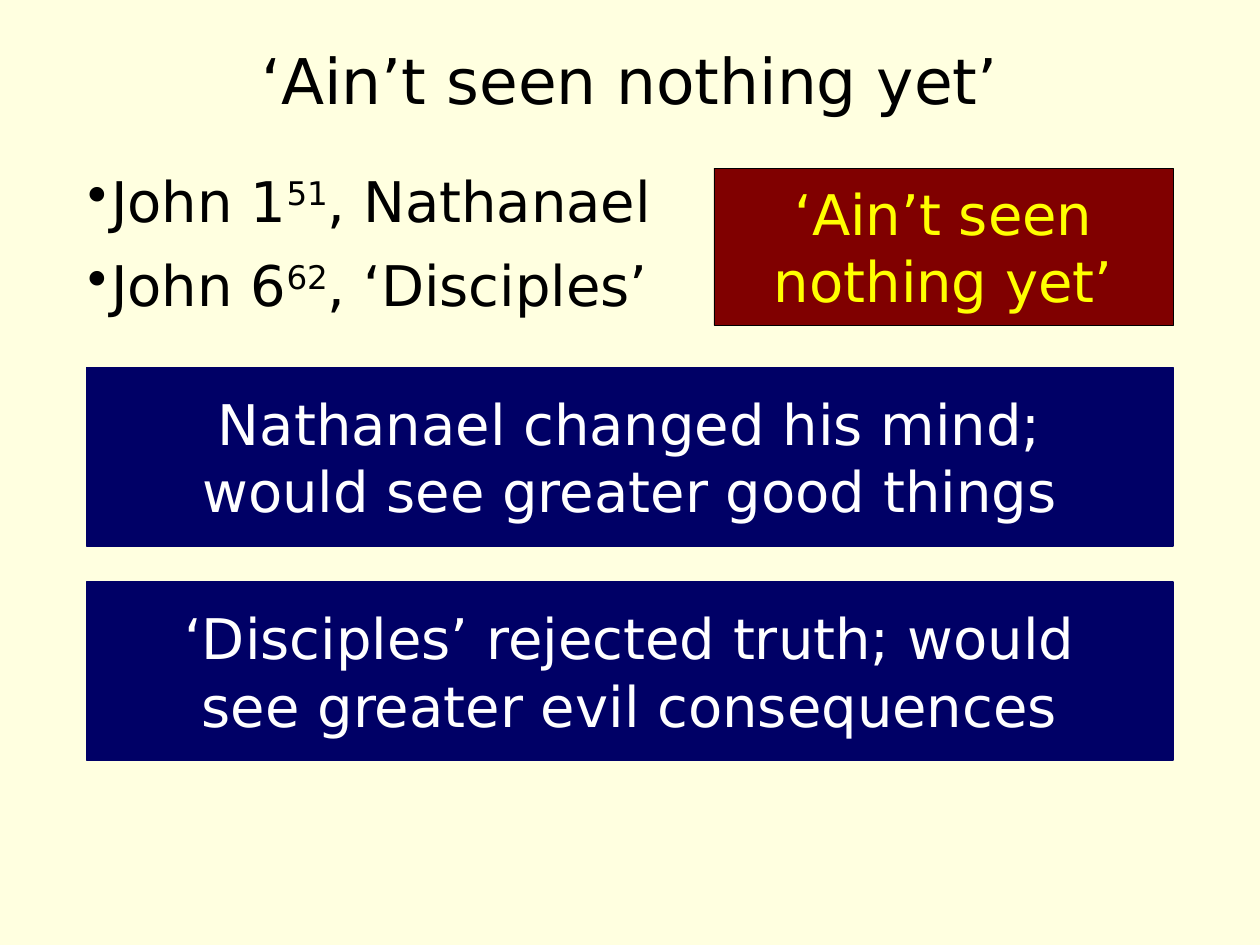
from lxml import etree
from pptx import Presentation
from pptx.dml.color import RGBColor
from pptx.enum.shapes import MSO_SHAPE
from pptx.enum.text import MSO_ANCHOR, PP_ALIGN
from pptx.oxml.ns import qn
from pptx.util import Pt

RECTANGLE = MSO_SHAPE.RECTANGLE
MIDDLE, TOP = MSO_ANCHOR.MIDDLE, MSO_ANCHOR.TOP
CENTER, LEFT = PP_ALIGN.CENTER, PP_ALIGN.LEFT

FONT = "DejaVu Sans"
COLORS = {
    "background": "FFFFE0",
    "text": "000000",
    "maroon": "800000",
    "yellow": "FFFF00",
    "navy": "000066",
    "white": "FFFFFF",
}
BULLET_FORMAT = {
    "alignment": LEFT,
    "line_spacing": 0.9,
    "space_before": Pt(7.5),
    "space_after": Pt(6),
}
VERSES = [("John 1", "51", ", Nathanael"), ("John 6", "62", ", ‘Disciples’")]
MESSAGES = [
    "Nathanael changed his mind;\vwould see greater good things",
    "‘Disciples’ rejected truth; would\vsee greater evil consequences",
]


def color(name):
    return RGBColor.from_string(COLORS[name])


def set_format(target, values):
    for name, value in values.items():
        setattr(target, name, value)


def style_font(font, size, color_name):
    set_format(font, {"name": FONT, "size": Pt(size)})
    font.color.rgb = color(color_name)


def in_points(box):
    return [Pt(length) for length in box]


def add_text_box(page, box, anchor):
    frame = page.shapes.add_textbox(*in_points(box)).text_frame
    set_format(frame, {"word_wrap": True, "vertical_anchor": anchor})
    return frame


def add_title(page, box, text):
    para = add_text_box(page, box, MIDDLE).paragraphs[0]
    set_format(para, {"text": text, "alignment": CENTER, "line_spacing": 0.9})
    style_font(para.runs[0].font, 36, "text")


def add_verses(page, box, verses):
    frame = add_text_box(page, box, TOP)
    for index, parts in enumerate(verses):
        para = frame.add_paragraph() if index else frame.paragraphs[0]
        set_format(para, BULLET_FORMAT)
        # Hanging bullet
        properties = para._p.get_or_add_pPr()
        properties.set("marL", str(Pt(13.5)))
        properties.set("indent", str(-Pt(13.5)))
        etree.SubElement(properties, qn("a:buChar")).set("char", "•")
        # The middle part is the raised verse number
        for position, part in enumerate(parts):
            span = para.add_run()
            span.text = part
            style_font(span.font, 32, "text")
            if position == 1:
                span._r.get_or_add_rPr().set("baseline", "30000")


def add_panel(page, box, text, fill, line, line_width, text_color):
    panel = page.shapes.add_shape(RECTANGLE, *in_points(box))
    panel.shadow.inherit = False
    panel.fill.solid()
    panel.fill.fore_color.rgb = color(fill)
    panel.line.color.rgb = color(line)
    panel.line.width = Pt(line_width)
    frame = panel.text_frame
    set_format(frame, {"word_wrap": True, "vertical_anchor": MIDDLE})
    para = frame.paragraphs[0]
    set_format(para, {"text": text, "alignment": CENTER})
    for span in para.runs:
        style_font(span.font, 32, text_color)


def add_messages(page, box, messages, gap):
    left, top, width, height = box
    panel_height = (height - gap * (len(messages) - 1)) / len(messages)
    for index, message in enumerate(messages):
        panel_top = top + index * (panel_height + gap)
        add_panel(page, (left, panel_top, width, panel_height), message,
                  "navy", "navy", 1, "white")


def main():
    deck = Presentation()
    set_format(deck, {"slide_width": Pt(720), "slide_height": Pt(540)})
    page = deck.slides.add_slide(deck.slide_layouts[6])
    page.background.fill.solid()
    page.background.fill.fore_color.rgb = color("background")

    add_title(page, (49.5, 12, 621, 72), "‘Ain’t seen nothing yet’")
    add_verses(page, (43, 96, 634, 426), VERSES)
    add_panel(page, (408, 96, 262.5, 90), "‘Ain’t seen nothing yet’",
              "maroon", "text", 0.25, "yellow")
    add_messages(page, (49.5, 210, 621, 224.5), MESSAGES, 20.5)
    deck.save("out.pptx")


if __name__ == "__main__":
    main()
